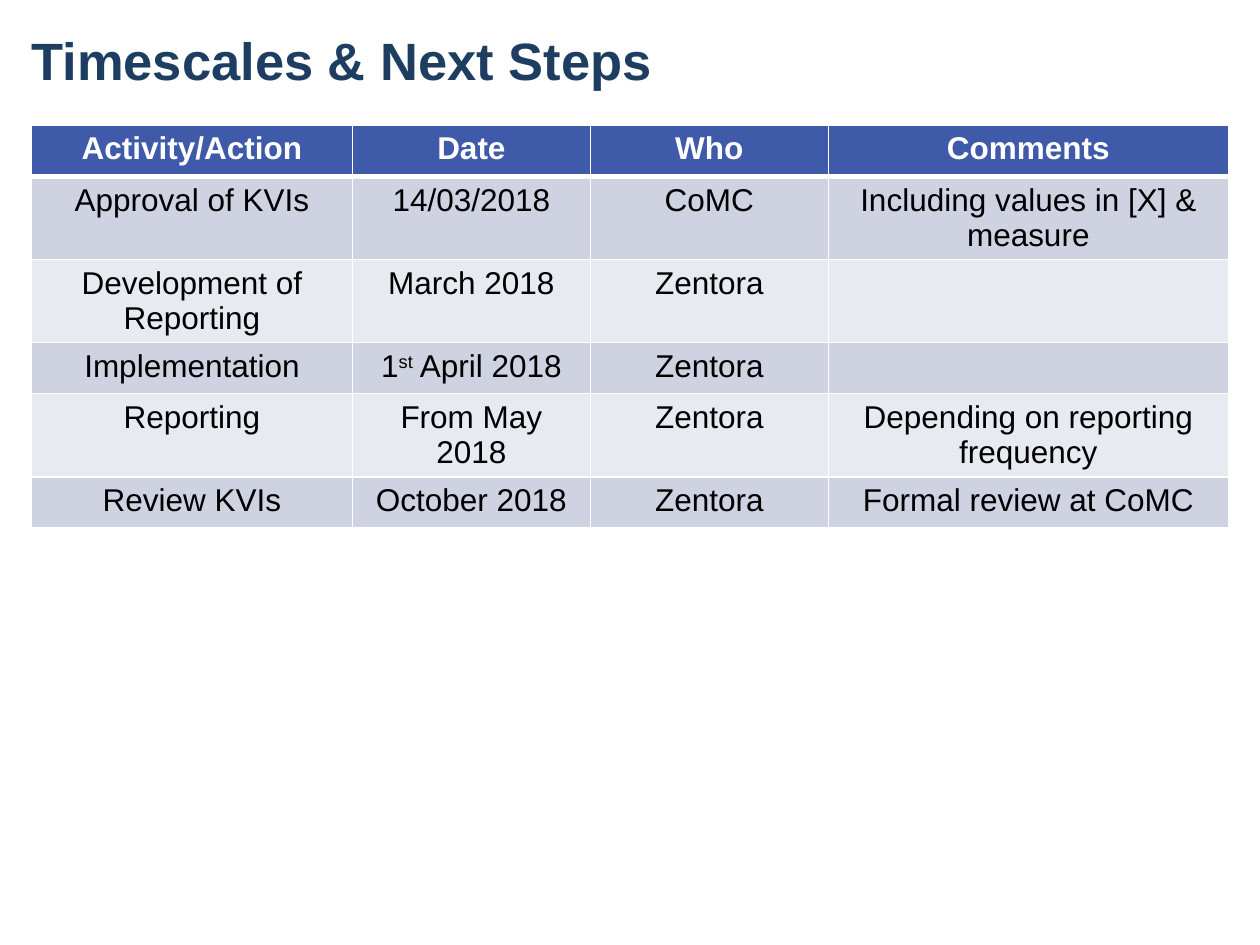
from lxml import etree
from pptx import Presentation
from pptx.dml.color import RGBColor
from pptx.enum.text import MSO_ANCHOR, PP_ALIGN
from pptx.oxml.ns import qn
from pptx.util import Pt

LEFT, CENTER = PP_ALIGN.LEFT, PP_ALIGN.CENTER
MIDDLE = MSO_ANCHOR.MIDDLE
TITLE_ONLY = 5
HEX = {
    "navy": "1D3E61",
    "head": "3E5AA8",
    "dark": "CED2E1",
    "light": "E8EAF1",
    "white": "FFFFFF",
    "black": "000000",
}
COLS = [183.4, 136, 136, 228.6]
ONE, TWO = 29.2, 47.5
ROWS = [
    (ONE, ["Activity/Action", "Date", "Who", "Comments"]),
    (TWO, ["Approval of KVIs", "14/03/2018", "CoMC", "Including values in [X] & measure"]),
    (TWO, ["Development of Reporting", "March 2018", "Zentora", ""]),
    (ONE, ["Implementation", "1^st^ April 2018", "Zentora", ""]),
    (TWO, ["Reporting", "From May 2018", "Zentora", "Depending on reporting frequency"]),
    (ONE, ["Review KVIs", "October 2018", "Zentora", "Formal review at CoMC"]),
]


def color(name):
    return RGBColor.from_string(HEX[name])


def write(frame, text, size=18, tint="black", bold=False, align=CENTER):
    para = frame.paragraphs[0]
    para.alignment = align
    para.font.size = Pt(size)
    for i, part in enumerate(text.split("^") if text else []):
        run = para.add_run()
        run.text = part
        font = run.font
        font.name, font.size, font.bold = "Arial", Pt(size), bold
        font.color.rgb = color(tint)
        if i % 2:
            run._r.get_or_add_rPr().set("baseline", "30000")


def edge(cell, side, width):
    line = etree.SubElement(cell._tc.get_or_add_tcPr(), qn("a:ln" + side), w=str(Pt(width)))
    fill = etree.SubElement(line, qn("a:solidFill"))
    etree.SubElement(fill, qn("a:srgbClr"), val=HEX["white"])


def add_title(slide, x, y, w, h):
    title = slide.shapes.title
    title.left, title.top, title.width, title.height = Pt(x), Pt(y), Pt(w), Pt(h)
    frame = title.text_frame
    frame.margin_left = frame.margin_right = frame.margin_top = frame.margin_bottom = 0
    frame.vertical_anchor = MIDDLE
    frame.word_wrap = True
    write(frame, "Timescales & Next Steps", size=30, tint="navy", bold=True, align=LEFT)


def add_steps(slide, x, y, w):
    high = sum(tall for tall, _ in ROWS)
    table = slide.shapes.add_table(len(ROWS), len(COLS), Pt(x), Pt(y), Pt(w), Pt(high)).table
    for col, wide in zip(table.columns, COLS):
        col.width = Pt(wide * w / sum(COLS))
    for r, (tall, texts) in enumerate(ROWS):
        table.rows[r].height = Pt(tall)
        head = r == 0
        shade = "head" if head else "dark" if r % 2 else "light"
        for c, text in enumerate(texts):
            cell = table.cell(r, c)
            for side in "LRTB":
                thick = (head and side == "B") or (r == 1 and side == "T")
                edge(cell, side, 3 if thick else 1)
            cell.fill.solid()
            cell.fill.fore_color.rgb = color(shade)
            write(cell.text_frame, text, tint="white" if head else "black", bold=head)


def main():
    deck = Presentation()
    deck.slide_width, deck.slide_height = Pt(720), Pt(540)
    slide = deck.slides.add_slide(deck.slide_layouts[TITLE_ONLY])
    add_title(slide, 18, -4.3, 684, 76.3)
    add_steps(slide, 18, 71.5, 684)
    deck.save("out.pptx")


if __name__ == "__main__":
    main()
